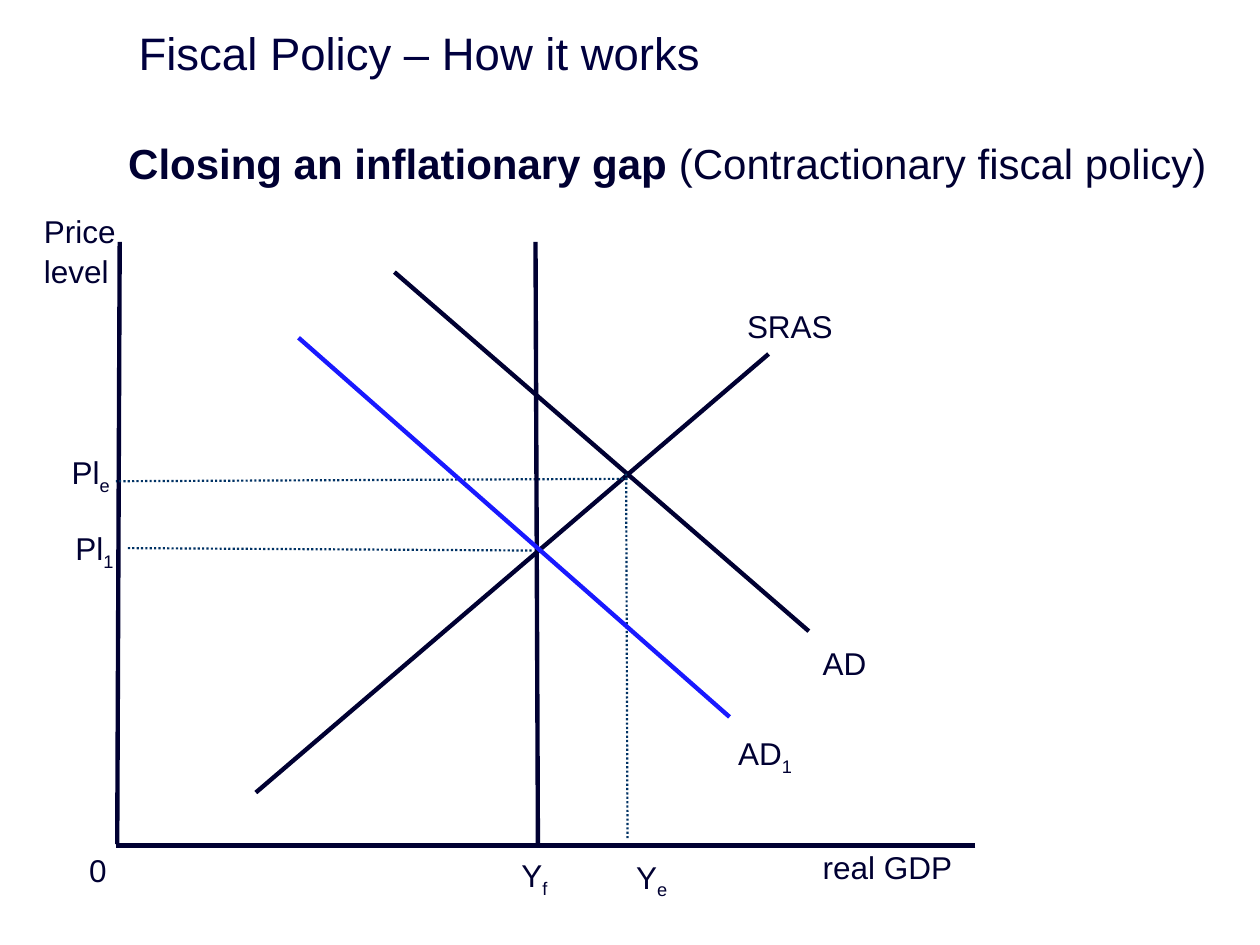
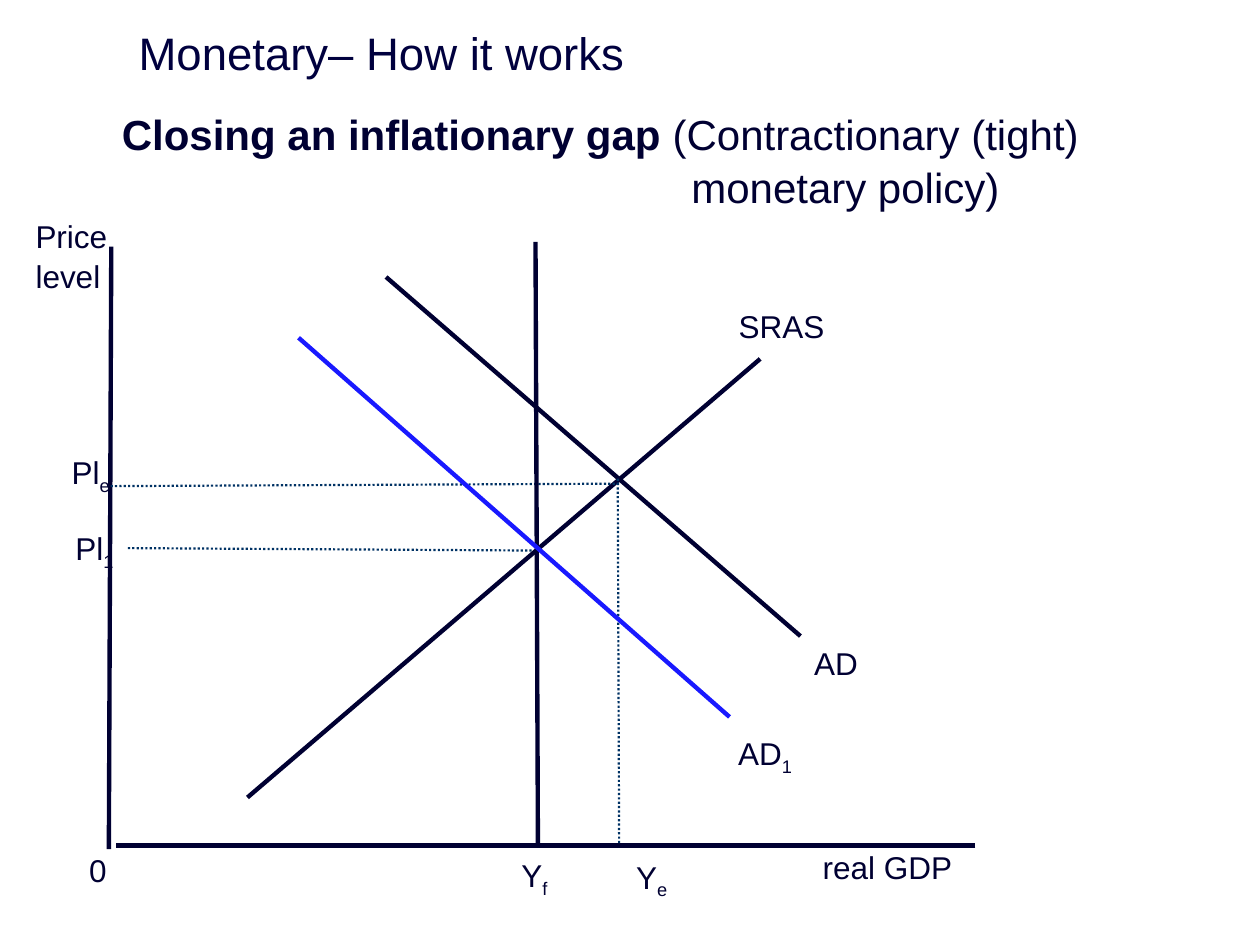
from lxml import etree
from pptx import Presentation
from pptx import util as u
from pptx.dml.color import RGBColor
from pptx.enum import dml, shapes, text
from pptx.oxml.ns import qn

Pt = u.Pt
FONT = "Arial"
COLOURS = {"title": "00003E", "ink": "000032", "guide": "003264", "shifted": "1919FF"}
LINE_SPACING = 1.05

# Each slide: title, plain part of the subtitle, its left, top and hanging indent,
# and how far the movable parts of the diagram are offset.
SLIDES = [
    ("Fiscal Policy – How it works", "(Contractionary fiscal policy)",
     66.2, 73.4, 27, (0, 0)),
    ("Monetary– How it works", "(Contractionary (tight) monetary policy)",
     62.6, 56.9, 325.4, (-4.8, 2.8)),
]

# Start x, start y, end x, end y, colour, width, dotted, movable
LINES = [
    (68.4, 138.2, 67, 482.4, "ink", 2.5, False, True),            # price axis
    (557.3, 483.1, 66.2, 483.1, "ink", 2.5, False, False),        # GDP axis
    (439.2, 202.3, 146.2, 452.9, "ink", 2.5, False, True),        # SRAS
    (225.4, 155.5, 462.2, 360.7, "ink", 2.5, False, True),        # AD
    (358.6, 273.6, 66.2, 275, "guide", 1.25, True, True),         # to Pl e
    (357.8, 270.7, 358.6, 480.2, "guide", 1.25, True, True),      # to Y e
    (306, 138.2, 307.4, 483.8, "ink", 2.5, False, False),         # full employment
    (170.6, 193, 416.9, 409.7, "shifted", 2.5, False, False),     # AD 1
    (303.8, 314.6, 72.7, 313.2, "guide", 1.25, True, False),      # to Pl 1
]

# Lines of text, subscript, left, top, width, share of the offset in x and y
LABELS = [
    (["real GDP"], "", 463, 480.2, 92.9, (0, 0)),
    (["0"], "", 43.9, 481.7, 46.1, (0, 0)),
    (["Price", "level"], "", 18, 116.6, 63.4, (1, 1)),
    (["SRAS"], "", 419.8, 170.6, 64.8, (1, 0)),
    (["AD"], "", 463, 363.6, 58.3, (1, 0)),
    (["Pl"], "1", 36, 297.4, 54, (0, 0)),
    (["Pl"], "e", 33.8, 254.2, 54, (0, 0)),
    (["Y"], "e", 356.4, 485.3, 39.6, (0, 0)),
    (["Y"], "f", 290.9, 484.6, 31.7, (0, 0)),
    (["AD"], "1", 414.7, 414.7, 58.3, (0, 0)),
]


def add_run(paragraph, words, size, colour="ink", bold=False):
    run = paragraph.add_run()
    run.text = words
    run.font.name = FONT
    run.font.size = Pt(size)
    run.font.bold = bold
    run.font.color.rgb = RGBColor.from_string(COLOURS[colour])
    return run


def add_text_box(slide, left, top, width, height):
    box = slide.shapes.add_textbox(Pt(left), Pt(top), Pt(width), Pt(height))
    box.text_frame.word_wrap = True
    return box.text_frame


presentation = Presentation()
presentation.slide_width, presentation.slide_height = Pt(720), Pt(540)

for title_words, policy, left, top, indent, (shift_x, shift_y) in SLIDES:
    slide = presentation.slides.add_slide(presentation.slide_layouts[5])

    title = slide.shapes.title
    title.left, title.top, title.width, title.height = Pt(72), Pt(11.5), Pt(648), Pt(36.7)
    title.text_frame.vertical_anchor = text.MSO_ANCHOR.MIDDLE
    paragraph = title.text_frame.paragraphs[0]
    paragraph.alignment = text.PP_ALIGN.LEFT
    add_run(paragraph, title_words, 26, "title")

    paragraph = add_text_box(slide, left, top, 635.8, 356.4).paragraphs[0]
    properties = paragraph._p.get_or_add_pPr()
    properties.set("marL", str(Pt(indent)))
    properties.set("indent", str(-Pt(indent)))
    paragraph.line_spacing = LINE_SPACING
    add_run(paragraph, "Closing an inflationary gap ", 24, bold=True)
    add_run(paragraph, policy, 24)

    for x1, y1, x2, y2, colour, width, dotted, movable in LINES:
        dx, dy = (shift_x, shift_y) if movable else (0, 0)
        connector = slide.shapes.add_connector(
            shapes.MSO_CONNECTOR.STRAIGHT,
            Pt(x1 + dx), Pt(y1 + dy), Pt(x2 + dx), Pt(y2 + dy))
        connector.line.color.rgb = RGBColor.from_string(COLOURS[colour])
        connector.line.width = Pt(width)
        if dotted:
            connector.line.dash_style = dml.MSO_LINE.ROUND_DOT
        etree.SubElement(connector._element.spPr, qn("a:effectLst"))

    for rows, subscript, left, top, width, (share_x, share_y) in LABELS:
        frame = add_text_box(slide, left + share_x * shift_x, top + share_y * shift_y,
                             width, 7 + 22 * len(rows))
        frame.auto_size = text.MSO_AUTO_SIZE.SHAPE_TO_FIT_TEXT
        for index, row in enumerate(rows):
            paragraph = frame.add_paragraph() if index else frame.paragraphs[0]
            paragraph.line_spacing = LINE_SPACING
            add_run(paragraph, row, 18)
        if subscript:
            run = add_run(paragraph, subscript, 18)
            run._r.get_or_add_rPr().set("baseline", "-25000")

presentation.save("out.pptx")
